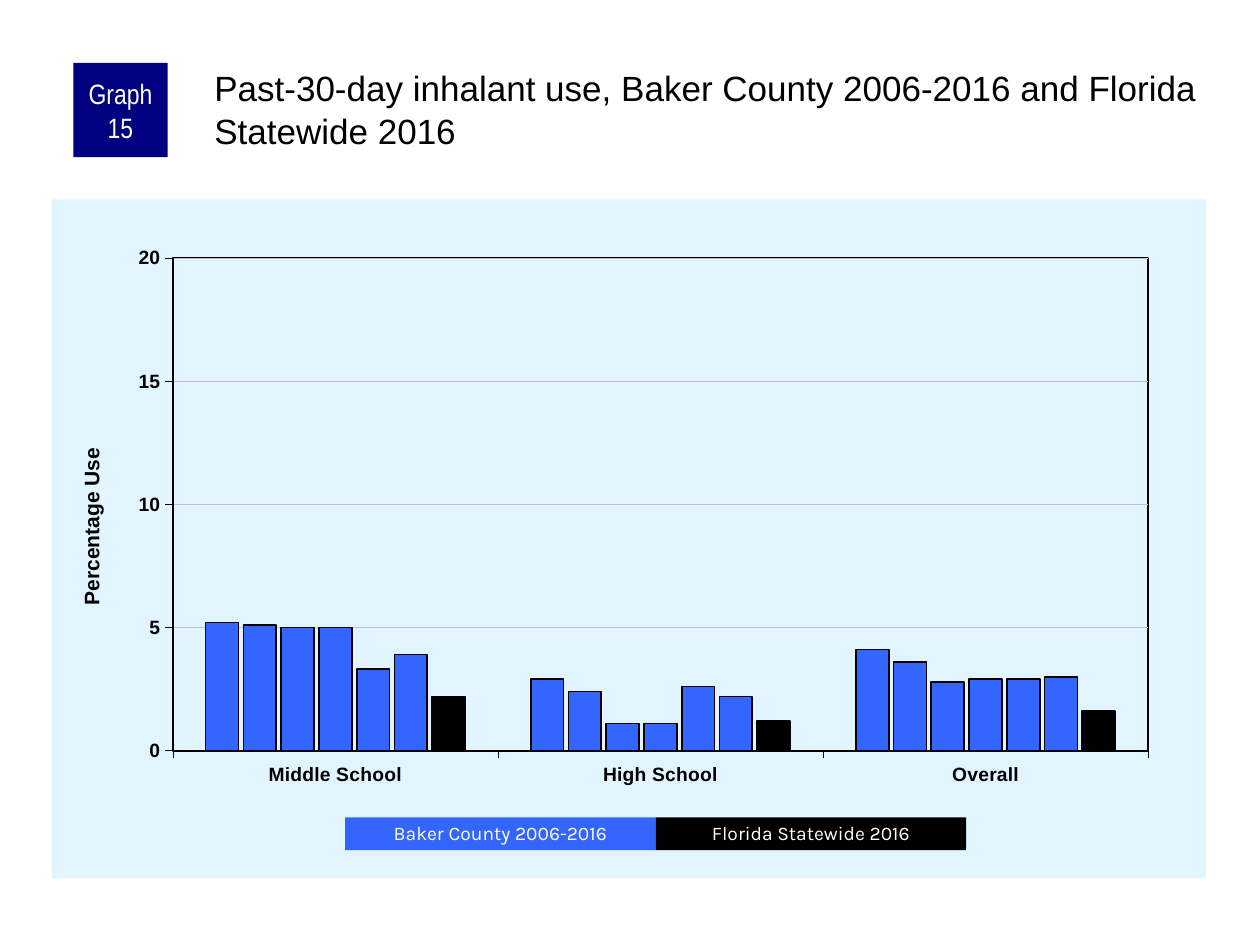
from lxml.etree import SubElement
from pptx import Presentation
from pptx.chart.data import CategoryChartData
from pptx.dml.color import RGBColor
from pptx.enum.chart import XL_CHART_TYPE, XL_TICK_MARK
from pptx.enum.shapes import MSO_SHAPE
from pptx.enum.text import MSO_ANCHOR, MSO_AUTO_SIZE, PP_ALIGN
from pptx.oxml import parse_xml
from pptx.oxml.ns import nsdecls, qn
from pptx.util import Cm, Pt

COLORS = {"county": "3366FF", "state": "000000", "badge": "000080", "panel": "E1F4FF",
          "grid": "C0C0C0", "text": "000000", "light": "FFFFFF"}
TITLE = "Past-30-day inhalant use, Baker County 2006-2016 and Florida Statewide 2016"
CATEGORIES = ["Middle School", "High School", "Overall"]
SERIES = [
    ("county", (5.2, 2.9, 4.1)),
    ("county", (5.1, 2.4, 3.6)),
    ("county", (5, 1.1, 2.8)),
    ("county", (5, 1.1, 2.9)),
    ("county", (3.3, 2.6, 2.9)),
    ("county", (3.9, 2.2, 3)),
    ("state", (2.2, 1.2, 1.6)),
]
LEGEND = [("Baker County 2006-2016", "county"), ("Florida Statewide 2016", "state")]
LEGEND_LEFT, LEGEND_TOP, LEGEND_WIDTH, LEGEND_HEIGHT = 6.96, 16.48, 6.26, 0.66


def color(name):
    return RGBColor.from_string(COLORS[name])


def style_font(font, size, name="Arial", tone="text", bold=False):
    font.name, font.size, font.bold = name, Pt(size), bold
    font.color.rgb = color(tone)


def style_line(line, tone, width):
    line.color.rgb = color(tone)
    line.width = Pt(width)


def add_box(slide, text, box, fill, size, font, spacing=None):
    shape = slide.shapes.add_shape(MSO_SHAPE.RECTANGLE, *map(Cm, box))
    shape.shadow.inherit = False
    shape.fill.solid()
    shape.fill.fore_color.rgb = color(fill)
    shape.line.fill.background()
    frame = shape.text_frame
    frame.word_wrap = True
    frame.vertical_anchor = MSO_ANCHOR.MIDDLE
    frame.margin_left = frame.margin_right = Cm(0.13)
    frame.margin_top = frame.margin_bottom = 0
    paragraph = frame.paragraphs[0]
    paragraph.alignment = PP_ALIGN.CENTER
    paragraph.line_spacing = spacing
    run = paragraph.add_run()
    run.text = text
    style_font(run.font, size, font, "light")


def make_layout(**settings):
    layout = parse_xml(f"<c:layout {nsdecls('c')}/>")
    manual = SubElement(layout, qn("c:manualLayout"))
    for key, value in settings.items():
        SubElement(manual, qn(f"c:{key}")).set("val", str(value))
    return layout


def remove_layout(parent):
    for layout in parent.findall(qn("c:layout")):
        parent.remove(layout)


def make_properties(fill, line):
    return parse_xml(f"<c:spPr {nsdecls('c', 'a')}>{fill}<a:ln w='12700'>{line}</a:ln></c:spPr>")


def solid(name):
    return f"<a:solidFill><a:srgbClr val='{COLORS[name]}'/></a:solidFill>"


def add_usage_chart(slide):
    data = CategoryChartData()
    data.categories = CATEGORIES
    for number, (tone, values) in enumerate(SERIES, 1):
        data.add_series(f"Series {number}", values)
    chart = slide.shapes.add_chart(XL_CHART_TYPE.COLUMN_CLUSTERED, Cm(1.04), Cm(4.02),
                                   Cm(23.27), Cm(13.69), data).chart
    chart.has_legend = chart.has_title = False
    style_font(chart.font, 8)

    plot = chart.plots[0]
    plot.gap_width, plot.overlap, plot.vary_by_categories = 200, -15, False
    for series, (tone, values) in zip(plot.series, SERIES):
        series.format.fill.solid()
        series.format.fill.fore_color.rgb = color(tone)
        style_line(series.format.line, "text", 1)

    for axis in (chart.category_axis, chart.value_axis):
        axis.major_tick_mark = XL_TICK_MARK.OUTSIDE
        axis.minor_tick_mark = XL_TICK_MARK.NONE
        style_font(axis.tick_labels.font, 11, bold=True)
        style_line(axis.format.line, "text", 0.25)
    value_axis = chart.value_axis
    value_axis.minimum_scale, value_axis.maximum_scale, value_axis.major_unit = 0, 20, 5
    value_axis.has_major_gridlines = True
    style_line(value_axis.major_gridlines.format.line, "grid", 0.25)

    axis_title = value_axis.axis_title
    run = axis_title.text_frame.paragraphs[0].add_run()
    run.text = "Percentage Use"
    style_font(run.font, 12, bold=True)
    title_element = value_axis._element.find(qn("c:title"))
    remove_layout(title_element)
    title_element.find(qn("c:tx")).addnext(
        make_layout(xMode="edge", yMode="edge", x=0.02, y=0.36))

    chart_element = chart._chartSpace.find(qn("c:chart"))
    chart_element.addnext(make_properties(solid("panel"), "<a:noFill/>"))
    plot_area = chart_element.find(qn("c:plotArea"))
    remove_layout(plot_area)
    plot_area.insert(0, make_layout(layoutTarget="inner", xMode="edge", yMode="edge",
                                    x=0.105, y=0.086, w=0.845, h=0.726))
    plot_area.append(make_properties("<a:noFill/>", solid("text")))


def add_title(slide):
    title = slide.shapes.title
    title.left, title.top, title.width, title.height = map(Cm, (4.24, 1.27, 20.12, 2.11))
    frame = title.text_frame
    frame.word_wrap = True
    frame.auto_size = MSO_AUTO_SIZE.NONE
    frame.vertical_anchor = MSO_ANCHOR.TOP
    frame.margin_left = frame.margin_top = Cm(0.08)
    frame.margin_right = frame.margin_bottom = 0
    paragraph = frame.paragraphs[0]
    paragraph.alignment = PP_ALIGN.LEFT
    run = paragraph.add_run()
    run.text = TITLE
    style_font(run.font, 20)


def main():
    presentation = Presentation()
    presentation.slide_width, presentation.slide_height = Cm(25.4), Cm(19.05)
    slide = presentation.slides.add_slide(presentation.slide_layouts[5])
    add_usage_chart(slide)
    add_box(slide, "Graph 15", (1.48, 1.27, 1.9, 1.9), "badge", 16, "Arial Narrow")
    add_title(slide)
    for index, (label, tone) in enumerate(LEGEND):
        box = (LEGEND_LEFT + index * LEGEND_WIDTH, LEGEND_TOP, LEGEND_WIDTH, LEGEND_HEIGHT)
        add_box(slide, label, box, tone, 11, "Karla", 0.9)
    presentation.save("out.pptx")


if __name__ == "__main__":
    main()
